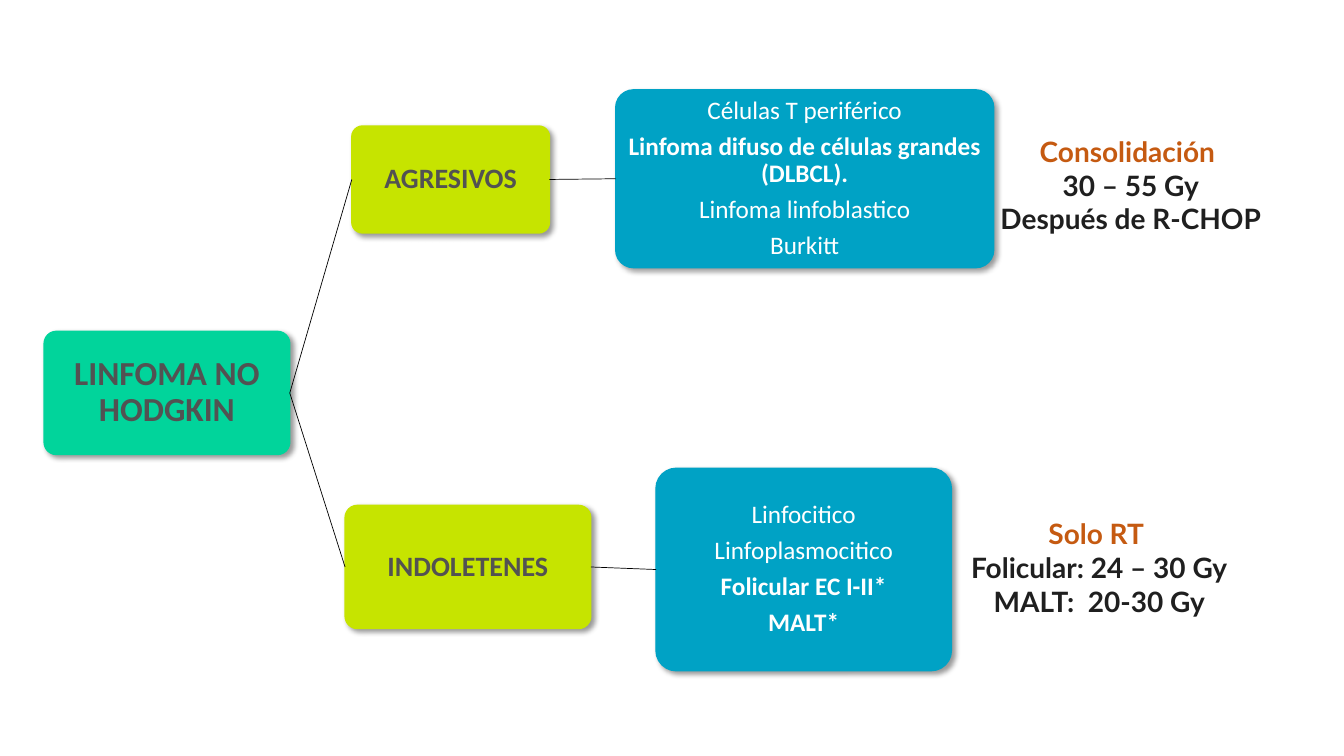
from lxml import etree
from pptx import Presentation
from pptx.dml.color import RGBColor
from pptx.enum import shapes, text
from pptx.oxml.ns import qn
from pptx.util import Pt

GREEN, LIME, BLUE = "01D49B", "C6E400", "00A2C5"
GREY, WHITE, ORANGE, BLACK = "525252", "FFFFFF", "C55A11", "1F1F1F"


def write(frame, content, size, color, font="Calibri", bold=False, first=True, line=1.0, after=0):
    """Add one centred paragraph; first reuses the paragraph already in the frame."""
    paragraph = frame.paragraphs[0] if first else frame.add_paragraph()
    paragraph.alignment = text.PP_ALIGN.CENTER
    paragraph.line_spacing = line
    paragraph.space_after = Pt(after)
    run = paragraph.add_run()
    run.text = content
    run.font.name = font
    run.font.size = Pt(size)
    run.font.bold = bold
    run.font.color.rgb = RGBColor.from_string(color)


def add_shadow(shape):
    shape.shadow.inherit = False
    effects = shape._element.spPr.find(qn("a:effectLst"))
    shadow = etree.SubElement(effects, qn("a:outerShdw"), blurRad=str(Pt(4)), dist=str(Pt(3)),
                              dir="2700000", algn="tl", rotWithShape="0")
    black = etree.SubElement(shadow, qn("a:srgbClr"), val="000000")
    etree.SubElement(black, qn("a:alpha"), val="40000")


presentation = Presentation()
presentation.slide_width, presentation.slide_height = Pt(960), Pt(540)
slide = presentation.slides.add_slide(presentation.slide_layouts[6])

# key: (left, top, width, height), fill, text colour, size, [(text, bold)]
boxes = {
    "Linfoma": ((31.5, 236.7, 175.5, 88), GREEN, GREY, 24, [("LINFOMA NO HODGKIN", True)]),
    "Indolentes": ((246.5, 361, 175.5, 88), LIME, GREY, 20, [("INDOLETENES", True)]),
    "Tipos indolentes": ((468.6, 334.5, 211, 144.6), BLUE, WHITE, 18, [
        ("Linfocitico", False), ("Linfoplasmocitico", False),
        ("Folicular EC I-II*", True), ("MALT*", True)]),
    "Agresivos": ((251.3, 90, 141.2, 76.4), LIME, GREY, 20, [("AGRESIVOS", True)]),
    "Tipos agresivos": ((439.8, 64.2, 270, 127), BLUE, WHITE, 18, [
        ("Células T periférico", False), ("Linfoma difuso de células grandes (DLBCL).", True),
        ("Linfoma linfoblastico", False), ("Burkitt", False)]),
}
nodes = {}
for key, (place, fill, color, size, lines) in boxes.items():
    node = slide.shapes.add_shape(shapes.MSO_SHAPE.ROUNDED_RECTANGLE, *map(Pt, place))
    node.adjustments[0] = 0.1
    node.fill.solid()
    node.fill.fore_color.rgb = RGBColor.from_string(fill)
    node.line.color.rgb = RGBColor.from_string(fill)
    node.line.width = Pt(1)
    add_shadow(node)
    frame = node.text_frame
    frame.word_wrap = True
    frame.vertical_anchor = text.MSO_ANCHOR.MIDDLE
    frame.margin_left = frame.margin_right = frame.margin_top = frame.margin_bottom = Pt(1)
    for index, (content, bold) in enumerate(lines):
        write(frame, content, size, color, bold=bold, first=index == 0,
              line=0.9, after=0.35 * size)
    nodes[key] = node

for parent, child in [("Linfoma", "Indolentes"), ("Indolentes", "Tipos indolentes"),
                      ("Linfoma", "Agresivos"), ("Agresivos", "Tipos agresivos")]:
    start, end = nodes[parent], nodes[child]
    branch = slide.shapes.add_connector(
        shapes.MSO_CONNECTOR.STRAIGHT,
        start.left + start.width, start.top + start.height // 2,
        end.left, end.top + end.height // 2)
    branch.line.color.rgb = RGBColor.from_string("000000")
    branch.line.width = Pt(0.5)
    etree.SubElement(branch._element.spPr, qn("a:effectLst"))

treatments = [
    ((686, 92.5, 243.5, 80), ["Consolidación ", "30 – 55 Gy", "Después de R-CHOP"]),
    ((677, 365.6, 216.5, 80), ["Solo RT ", "Folicular: 24 – 30 Gy", "MALT:  20-30 Gy"]),
]
for place, lines in treatments:
    treatment = slide.shapes.add_textbox(*map(Pt, place))
    frame = treatment.text_frame
    frame.word_wrap = True
    frame.auto_size = text.MSO_AUTO_SIZE.SHAPE_TO_FIT_TEXT
    for index, content in enumerate(lines):
        write(frame, content, 20, BLACK if index else ORANGE, font="Lato", bold=True,
              first=index == 0)

presentation.save("out.pptx")
